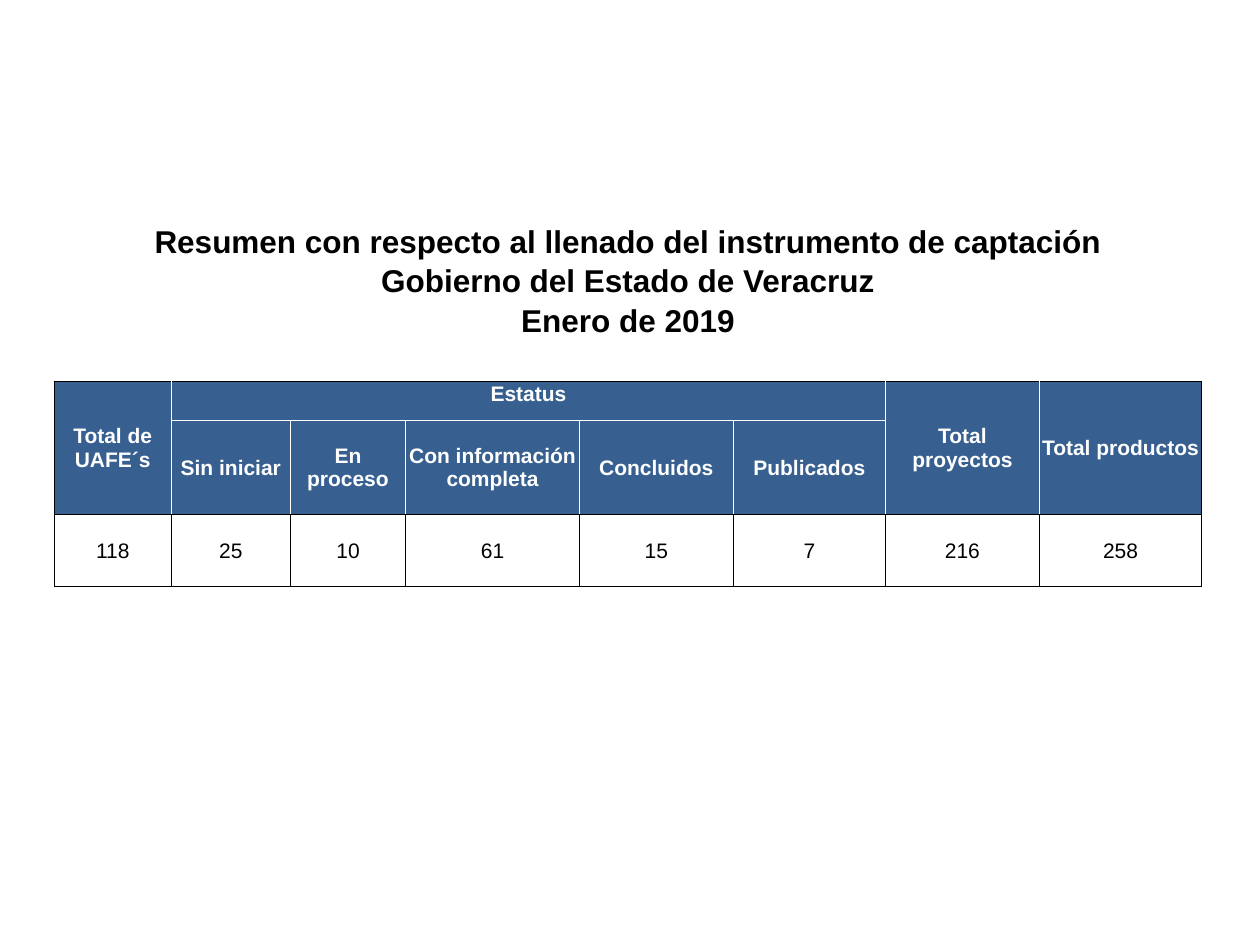
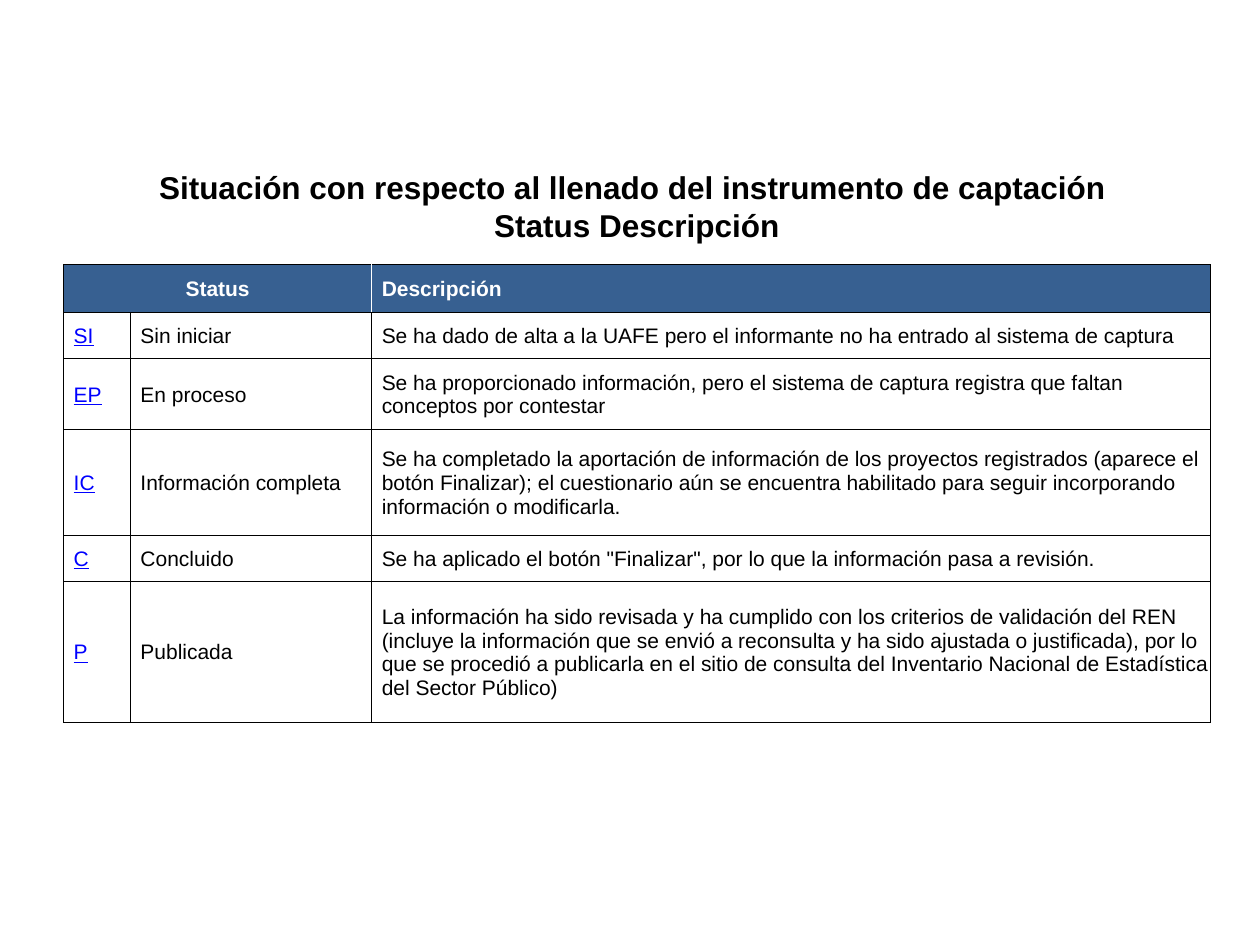
from lxml import etree
from pptx import Presentation
from pptx.dml.color import RGBColor
from pptx.enum.text import MSO_ANCHOR, MSO_AUTO_SIZE, PP_ALIGN
from pptx.oxml.ns import qn
from pptx.util import Inches, Pt

CENTER, LEFT = PP_ALIGN.CENTER, PP_ALIGN.LEFT
TOP, MIDDLE = MSO_ANCHOR.TOP, MSO_ANCHOR.MIDDLE
FIXED = MSO_AUTO_SIZE.NONE
TITLE_ONLY, BLANK = 5, 6
PLAIN = "{2D5ABB26-0587-4C30-8999-92F81FD0307C}"
BLACK, WHITE, NAVY, BLUE = "000000", "FFFFFF", "376091", "0000FF"
WIDE, HIGH = Inches(10), Inches(7.5)
COLS, ROWS = 100, 75

FORMS = {
    "title": {"size": Pt(18), "bold": True, "color": BLACK},
    "head": {"size": Pt(12), "bold": True, "color": WHITE},
    "body": {"size": Pt(12), "bold": False, "color": BLACK},
    "code": {"size": Pt(12), "bold": False, "color": BLUE, "underline": True},
}
FILLS = {"head": NAVY, "body": WHITE}


def paint(color, code):
    color.rgb = RGBColor.from_string(code)


class Deck:
    font = "Arial"

    def __init__(self):
        self.prs = Presentation()
        self.prs.slide_width, self.prs.slide_height = WIDE, HIGH
        self.slide = None

    def x(self, cols):
        return round(WIDE * cols / COLS)

    def y(self, rows):
        return round(HIGH * rows / ROWS)

    def add(self, layout):
        self.slide = self.prs.slides.add_slide(self.prs.slide_layouts[layout])

    def style(self, para, form, align):
        para.alignment = align
        para.font.name = self.font
        for key, value in FORMS[form].items():
            if key == "color":
                paint(para.font.color, value)
            else:
                setattr(para.font, key, value)

    def title(self, lines, left, top, wide, high, pitch):
        box = self.slide.shapes.title
        box.left, box.top = self.x(left), self.y(top)
        box.width, box.height = self.x(wide), self.y(high)
        frame = box.text_frame
        frame.text = "\n".join(lines)
        frame.auto_size, frame.vertical_anchor = FIXED, TOP
        for para in frame.paragraphs:
            para.line_spacing = Pt(pitch)
            para.space_before = Pt(0)
            self.style(para, "title", CENTER)

    def edge(self, cell, sides):
        props = cell._tc.get_or_add_tcPr()
        for spot, (side, code) in enumerate(sides.items()):
            line = etree.Element(qn("a:ln" + side), w=str(Pt(0.5)))
            fill = etree.SubElement(line, qn("a:solidFill"))
            etree.SubElement(fill, qn("a:srgbClr"), val=code)
            props.insert(spot, line)

    def grid(self, left, top, wides, highs):
        grid = self.slide.shapes.add_table(
            len(highs), len(wides), self.x(left), self.y(top),
            self.x(sum(wides)), self.y(sum(highs))).table
        grid.first_row = grid.horz_banding = False
        grid._tbl.tblPr.find(qn("a:tableStyleId")).text = PLAIN
        for col, wide in zip(grid.columns, wides):
            col.width = self.x(wide)
        for row, high in zip(grid.rows, highs):
            row.height = self.y(high)
        return grid

    def table(self, rows, kinds, left, top, wides, highs, spans,
              align=CENTER, pad=0.1, codes=False):
        grid = self.grid(left, top, wides, highs)
        last = len(wides) - 1
        first, body = kinds.index("head"), kinds.index("body")
        areas = {}
        for area in spans:
            r1, c1, r2, c2 = area
            grid.cell(r1, c1).merge(grid.cell(r2, c2))
            for r in range(r1, r2 + 1):
                for c in range(c1, c2 + 1):
                    areas[r, c] = area
        for r, (row, kind) in enumerate(zip(rows, kinds)):
            for c, text in enumerate(row):
                cell = grid.cell(r, c)
                r1, c1, r2, c2 = areas.get((r, c), (r, c, r, c))
                cell.margin_left = self.x(pad)
                cell.margin_right = self.x(0.1)
                cell.margin_top = self.y(0.1 if text else 0)
                cell.margin_bottom = 0
                cell.vertical_anchor = TOP if kind == "title" else MIDDLE
                if kind in FILLS:
                    cell.fill.solid()
                    paint(cell.fill.fore_color, FILLS[kind])
                    inner = WHITE if kind == "head" else BLACK
                    root = (r, c) == (r1, c1)
                    sides = {
                        "L": (c == c1, c1 == 0),
                        "R": (root or c == c2, c2 == last),
                        "T": (r == r1, r1 == first),
                        "B": (root or r == r2, r2 == body - 1),
                    }
                    self.edge(cell, {side: BLACK if outer else inner
                                     for side, (shown, outer) in sides.items()
                                     if shown})
                if text:
                    cell.text = text
                    link = codes and c == 0 and kind == "body"
                    self.style(cell.text_frame.paragraphs[0],
                               "code" if link else kind, align)
        return grid


def recap(deck):
    deck.add(BLANK)
    lines = ["", "Resumen con respecto al llenado del instrumento de captación",
             "Gobierno del Estado de Veracruz", "Enero de 2019"]
    pairs = range(2, 10, 2)
    wides = [9.3, 9.45, 4.5, 4.65, 9.4, 4.4, 9.7, 2.5, 7.6, 4.5, 12.2, 12.9]
    rest = [""] * (len(wides) - 1)
    rows = [[line] + rest for line in lines] + [
        [""] + rest,
        ["Total de UAFE´s", "Estatus"] + [""] * 8
        + ["Total proyectos", "Total productos"],
        ["", "Sin iniciar", "En proceso", "", "Con información completa", "",
         "Concluidos", "", "Publicados", "", "", ""],
        ["118", "25", "10", "", "61", "", "15", "", "7", "", "216", "258"],
    ]
    spans = [(r, 0, r, 11) for r in range(len(lines))]
    spans += [(4, c - 1, 4, c) for c in pairs]
    spans += [(r, c, r, c + 1) for r in (6, 7) for c in pairs]
    spans += [(5, c, 6, c) for c in (0, 10, 11)] + [(5, 1, 5, 9)]
    grid = deck.table(
        rows, ["title"] * 5 + ["head"] * 2 + ["body"], 4.3, 14.65, wides,
        [3.12] * 6 + [7.45, 5.7], spans)
    grid.cell(5, 1).vertical_anchor = TOP


def status(deck):
    deck.add(TITLE_ONLY)
    deck.title(["Situación con respecto al llenado del instrumento de captación ",
                "Status Descripción"], 3.3, 12.8, 94.5, 7.1, 21.7)
    grid = deck.table(
        [["Status", "", "Descripción"],
         ["SI", "Sin iniciar",
          "Se ha dado de alta a la UAFE pero el informante no ha entrado "
          "al sistema de captura"],
         ["EP", "En proceso",
          "Se ha proporcionado información, pero el sistema de captura "
          "registra que faltan conceptos por contestar"],
         ["IC", "Información completa",
          "Se ha completado la aportación de información de los proyectos "
          "registrados (aparece el botón Finalizar); el cuestionario aún se "
          "encuentra habilitado para seguir incorporando información o "
          "modificarla."],
         ["C", "Concluido",
          "Se ha aplicado el botón \"Finalizar\", por lo que la información "
          "pasa a revisión."],
         ["P", "Publicada",
          "La información ha sido revisada y ha cumplido con los criterios "
          "de validación del REN (incluye la información que se envió a "
          "reconsulta y ha sido ajustada o justificada), por lo que se "
          "procedió a publicarla en el sitio de consulta del Inventario "
          "Nacional de Estadística del Sector Público)"]],
        ["head"] + ["body"] * 5, 5.05, 21, [5.3, 19.15, 66.6],
        [3.8, 3.65, 5.65, 8.4, 3.65, 11.2], [(0, 0, 0, 1)], LEFT, 0.8, True)
    label = grid.cell(0, 0)
    label.margin_left = deck.x(0.1)
    label.text_frame.paragraphs[0].alignment = CENTER


def main():
    deck = Deck()
    recap(deck)
    status(deck)
    deck.prs.save("out.pptx")


if __name__ == "__main__":
    main()
